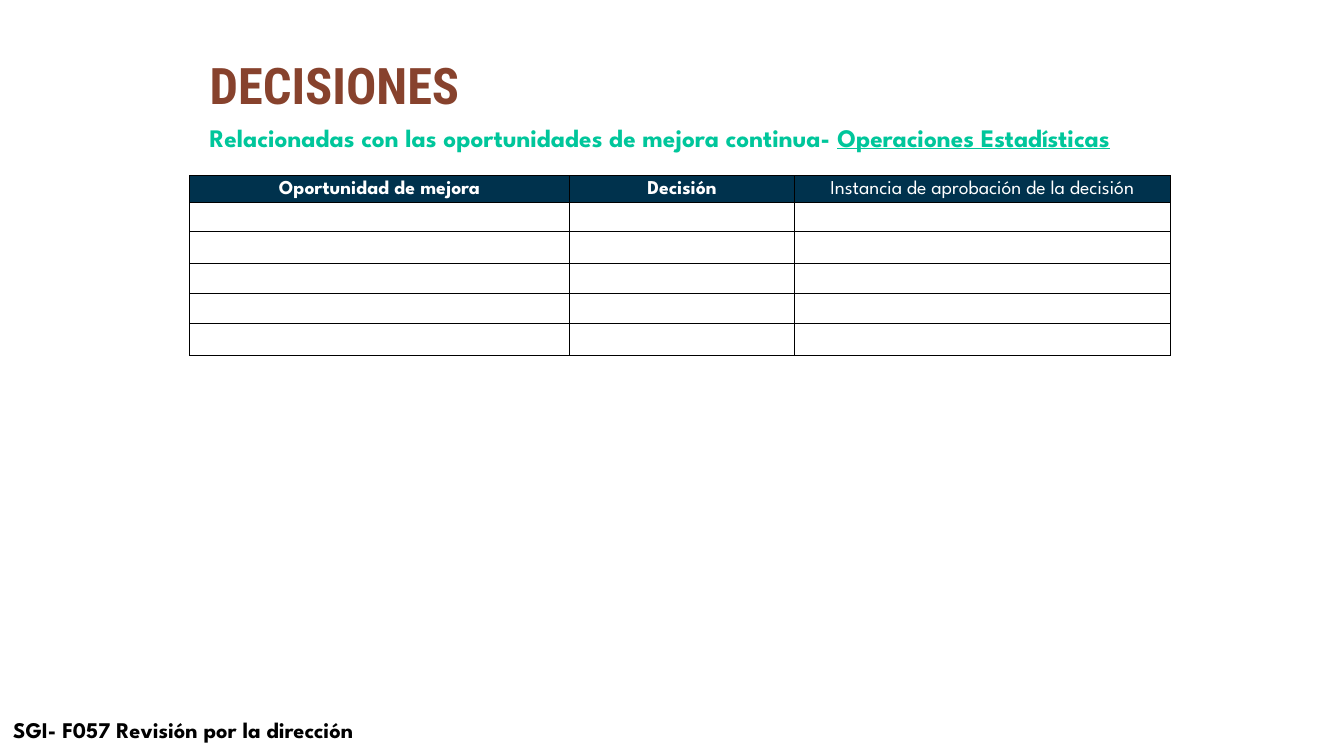
import pptx
import pptx.util
import pptx.dml.color
import pptx.enum.text
import pptx.oxml.ns
from lxml import etree

Inches, Pt = pptx.util.Inches, pptx.util.Pt
ANCHOR, ALIGN = pptx.enum.text.MSO_ANCHOR, pptx.enum.text.PP_ALIGN

# Content: each run is its text and its format
COLORS = {"title": "87422D", "accent": "00C69B", "header": "00324D",
          "white": "FFFFFF", "black": "000000"}
SPARTAN = "League Spartan"
TITLE_FORMAT = {"name": "Roboto Condensed", "size": Pt(36), "bold": True, "color": "title"}
SUBTITLE_FORMAT = {"name": SPARTAN, "size": Pt(18), "bold": True, "color": "accent"}
HEADER_FORMAT = {"name": SPARTAN, "size": Pt(14), "bold": True, "color": "white"}
FOOTER_FORMAT = {"name": SPARTAN, "size": Pt(16), "bold": True, "color": "black"}

TITLE = [("DECISIONES", TITLE_FORMAT)]
SUBTITLE = [
    ("Relacionadas con las oportunidades de mejora continua- ", SUBTITLE_FORMAT),
    ("Operaciones Estadísticas", {**SUBTITLE_FORMAT, "underline": True}),
]
FOOTER = [("SGI- F057 Revisión por la dirección", FOOTER_FORMAT)]
HEADERS = [
    ("Oportunidad de mejora", HEADER_FORMAT),
    ("Decisión", HEADER_FORMAT),
    ("Instancia de aprobación de la decisión", {**HEADER_FORMAT, "bold": False}),
]
COLUMN_WIDTHS = [3.77, 2.23, 3.73]
ROW_HEIGHTS = [0.27, 0.29, 0.31, 0.3, 0.3, 0.32]
TABLE_LEFT, TABLE_TOP = 1.88, 1.74


def rgb(name):
    return pptx.dml.color.RGBColor.from_string(COLORS[name])


def write_runs(paragraph, runs):
    for text, format_values in runs:
        run = paragraph.add_run()
        run.text = text
        for key, value in format_values.items():
            if key == "color":
                run.font.color.rgb = rgb(value)
            else:
                setattr(run.font, key, value)


def write_box(shape, box, runs, anchor=ANCHOR.TOP, side_margin=0.1):
    shape.left, shape.top, shape.width, shape.height = map(Inches, box)
    frame = shape.text_frame
    values = {"word_wrap": True, "vertical_anchor": anchor,
              "auto_size": pptx.enum.text.MSO_AUTO_SIZE.NONE,
              "margin_left": Inches(side_margin), "margin_right": Inches(side_margin),
              "margin_top": Inches(0.05), "margin_bottom": Inches(0.05)}
    for key, value in values.items():
        setattr(frame, key, value)
    paragraph = frame.paragraphs[0]
    paragraph.alignment = ALIGN.LEFT
    paragraph.line_spacing = 1.0
    paragraph.space_before = Pt(0)
    write_runs(paragraph, runs)


def add_borders(cell):
    properties = cell._tc.get_or_add_tcPr()
    qn = pptx.oxml.ns.qn
    for side in ("a:lnL", "a:lnR", "a:lnT", "a:lnB"):
        line = etree.SubElement(properties, qn(side), w=str(Pt(0.5)))
        fill = etree.SubElement(line, qn("a:solidFill"))
        etree.SubElement(fill, qn("a:srgbClr"), val=COLORS["black"])


presentation = pptx.Presentation()
presentation.slide_width, presentation.slide_height = Inches(13.33), Inches(7.5)
slide = presentation.slides.add_slide(presentation.slide_layouts[5])

# Title, subtitle and footer
write_box(slide.shapes.title, (1.98, 0.49, 9.2, 0.71), TITLE)
subtitle = slide.shapes.add_textbox(0, 0, 0, 0)
write_box(subtitle, (1.98, 1.16, 10.02, 0.4), SUBTITLE)

# Table of decisions
table = slide.shapes.add_table(
    len(ROW_HEIGHTS), len(COLUMN_WIDTHS), Inches(TABLE_LEFT), Inches(TABLE_TOP),
    Inches(sum(COLUMN_WIDTHS)), Inches(sum(ROW_HEIGHTS))).table
for column, width in zip(table.columns, COLUMN_WIDTHS):
    column.width = Inches(width)
for row_index, (row, height) in enumerate(zip(table.rows, ROW_HEIGHTS)):
    row.height = Inches(height)
    for cell, header in zip(row.cells, HEADERS):
        add_borders(cell)
        cell.fill.solid()
        cell.fill.fore_color.rgb = rgb("white" if row_index else "header")
        cell.vertical_anchor = ANCHOR.MIDDLE
        cell.margin_left = cell.margin_right = cell.margin_top = Inches(0.01)
        cell.margin_bottom = 0
        paragraph = cell.text_frame.paragraphs[0]
        paragraph.alignment = ALIGN.CENTER
        if row_index == 0:
            write_runs(paragraph, [header])
        else:
            # A small type size keeps the empty rows at their height
            etree.SubElement(paragraph._p, pptx.oxml.ns.qn("a:endParaRPr"), sz="1000")

footer = slide.shapes.add_textbox(0, 0, 0, 0)
write_box(footer, (0.08, 7.05, 4.8, 0.37), FOOTER, ANCHOR.BOTTOM, 0.05)

presentation.save("out.pptx")
